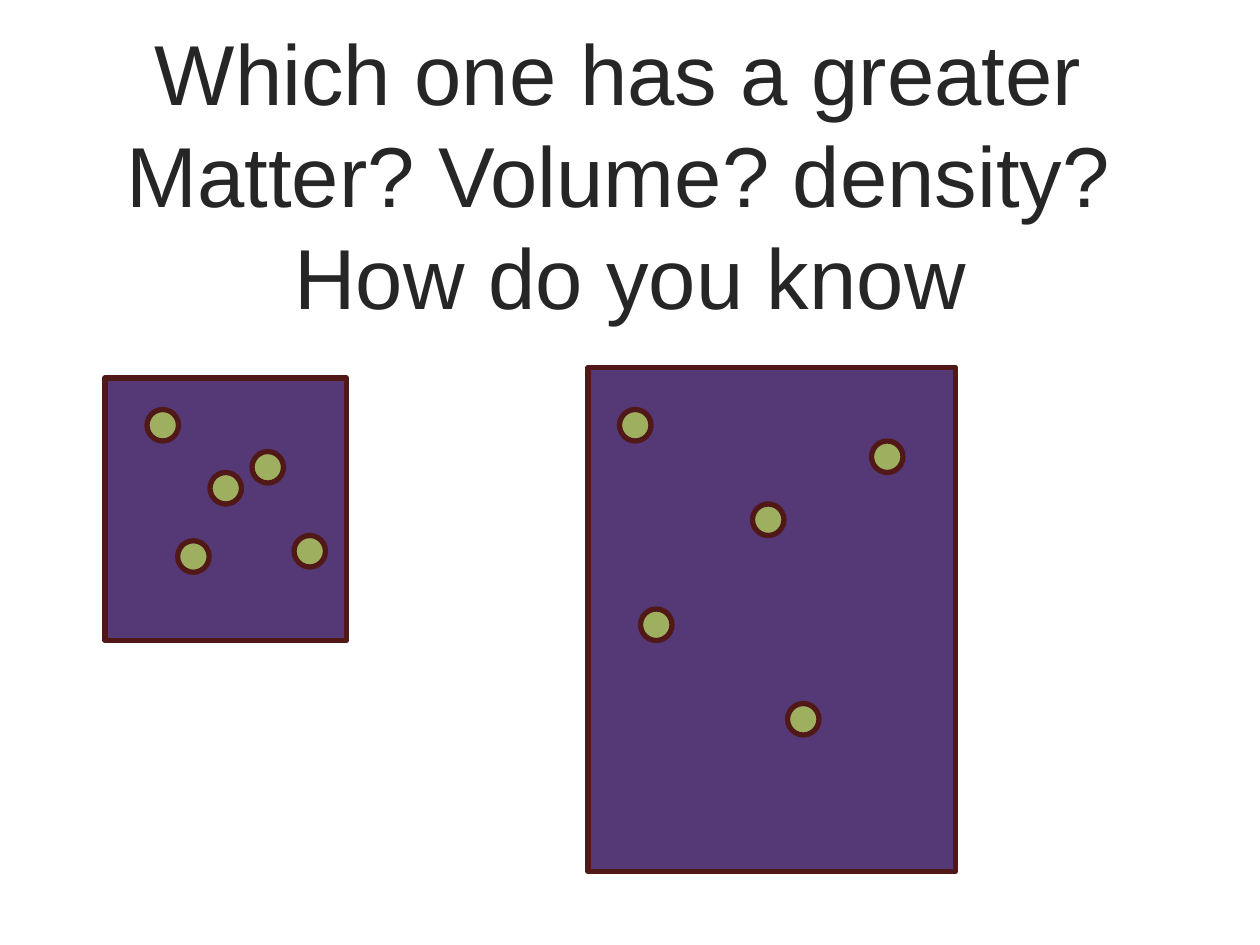
from dataclasses import dataclass

from pptx import Presentation
from pptx.dml.color import RGBColor
from pptx.enum.shapes import MSO_SHAPE
from pptx.enum.text import MSO_ANCHOR, PP_ALIGN
from pptx.slide import Slide
from pptx.util import Pt

PURPLE = RGBColor(0x55, 0x38, 0x76)
MAROON = RGBColor(0x51, 0x18, 0x18)
GREEN = RGBColor(0x9E, 0xB0, 0x60)
CHARCOAL = RGBColor(0x26, 0x26, 0x26)
PARTICLE_SIZE = 18
TITLE = "Which one has a greater \vMatter? Volume? density? \vHow do you know"


@dataclass
class Box:
    left: float
    top: float
    width: float
    height: float


@dataclass
class Container:
    box: Box
    particles: list[tuple[float, float]]


CONTAINERS = [
    Container(
        Box(60, 216, 138, 150),
        [(84, 234), (144, 258), (120, 270), (101.5, 309), (168, 306)],
    ),
    Container(
        Box(336, 210, 210, 288),
        [(450, 402), (498, 252), (366, 348), (430, 288), (354, 234)],
    ),
]


def add_outlined_shape(slide: Slide, kind: MSO_SHAPE, box: Box, color: RGBColor) -> None:
    shape = slide.shapes.add_shape(
        kind, Pt(box.left), Pt(box.top), Pt(box.width), Pt(box.height)
    )
    shape.shadow.inherit = False
    shape.fill.solid()
    shape.fill.fore_color.rgb = color
    shape.line.color.rgb = MAROON
    shape.line.width = Pt(3)


def add_container(slide: Slide, container: Container) -> None:
    add_outlined_shape(slide, MSO_SHAPE.RECTANGLE, container.box, PURPLE)
    for left, top in container.particles:
        particle = Box(left, top, PARTICLE_SIZE, PARTICLE_SIZE)
        add_outlined_shape(slide, MSO_SHAPE.FLOWCHART_CONNECTOR, particle, GREEN)


def add_title(slide: Slide) -> None:
    text_frame = slide.shapes.add_textbox(Pt(36), Pt(54), Pt(648), Pt(90)).text_frame
    text_frame.word_wrap = True
    text_frame.vertical_anchor = MSO_ANCHOR.MIDDLE
    text_frame.text = TITLE
    paragraph = text_frame.paragraphs[0]
    paragraph.alignment = PP_ALIGN.CENTER
    paragraph.line_spacing = Pt(58.3)
    for run in paragraph.runs:
        run.font.name = "Arial"
        run.font.size = Pt(48.6)
        run.font.color.rgb = CHARCOAL


def main() -> None:
    presentation = Presentation()
    presentation.slide_width = Pt(720)
    presentation.slide_height = Pt(540)
    slide = presentation.slides.add_slide(presentation.slide_layouts[6])
    add_title(slide)
    for container in CONTAINERS:
        add_container(slide, container)
    presentation.save("out.pptx")


if __name__ == "__main__":
    main()
